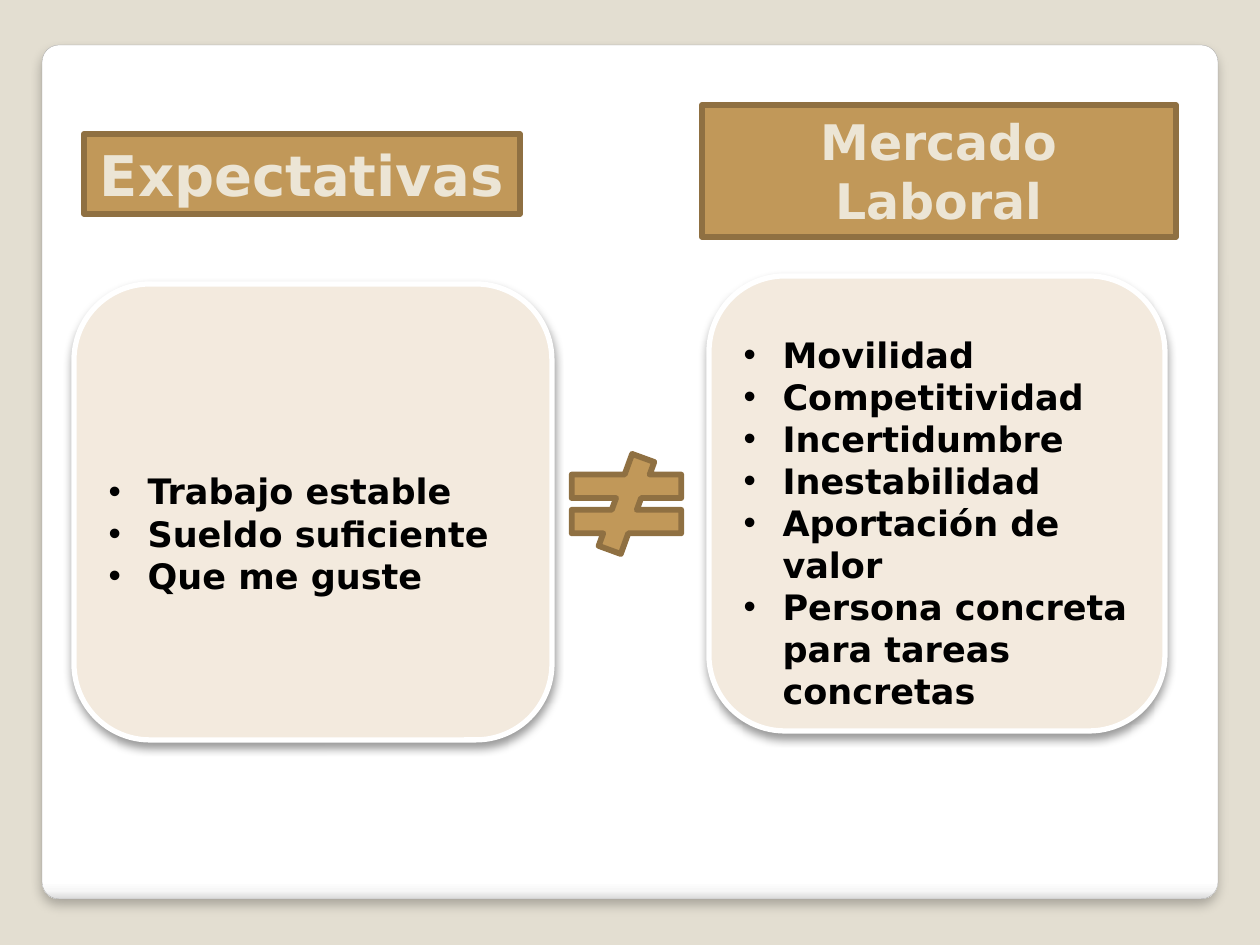
from dataclasses import dataclass

from lxml import etree
from pptx import Presentation
from pptx.dml.color import RGBColor
from pptx.enum.shapes import MSO_SHAPE
from pptx.enum.text import MSO_ANCHOR, MSO_AUTO_SIZE, PP_ALIGN
from pptx.oxml.ns import qn
from pptx.util import Pt

ROUND = MSO_SHAPE.ROUNDED_RECTANGLE
UNEQUAL = MSO_SHAPE.MATH_NOT_EQUAL
TOP, MIDDLE = MSO_ANCHOR.TOP, MSO_ANCHOR.MIDDLE
LEFT, CENTER = PP_ALIGN.LEFT, PP_ALIGN.CENTER
FIXED = MSO_AUTO_SIZE.NONE
COMPARISON = 4
SCALE = 914400 / 126


@dataclass(frozen=True)
class Theme:
    font: str = "DejaVu Sans"
    back: str = "E3DED1"
    panel: tuple = ((0, "FFFFFF"), (98, "FFFFFF"), (99, "F7F7F7"), (100, "DADADA"))
    rim: str = "A4A4A4"
    card: str = "F3EADE"
    edge: str = "FFFFFF"
    gold: str = "C19859"
    brown: str = "8F7042"
    cream: str = "ECE5D5"
    ink: str = "000000"
    halo: str = "323232"
    list_size: int = 20
    hope_size: int = 32
    job_size: int = 28


THEME = Theme()


def px(num):
    return round(num * SCALE)


def rgb(code):
    return RGBColor.from_string(code)


def node(parent, tag, **attrs):
    item = etree.SubElement(parent, qn(tag))
    for key, value in attrs.items():
        item.set(key, str(value))
    return item


def place(shape, box):
    shape.left, shape.top, shape.width, shape.height = map(px, box)


def paint(shape, fill, line, width):
    shape.fill.solid()
    shape.fill.fore_color.rgb = rgb(fill)
    shape.line.color.rgb = rgb(line)
    shape.line.width = Pt(width)


def add_form(slide, kind, box):
    shape = slide.shapes.add_shape(kind, *map(px, box))
    shape.shadow.inherit = False
    return shape


def cast(shape, alpha, blur, dist):
    """Give the shape a soft black shadow that falls straight down."""
    effects = shape.element.spPr.find(qn("a:effectLst"))
    shade = node(effects, "a:outerShdw", blurRad=Pt(blur), dist=Pt(dist),
                 dir=5400000, algn="t", rotWithShape=0)
    color = node(shade, "a:srgbClr", val="000000")
    node(color, "a:alpha", val=alpha * 1000)


def write(para, text, size, color, align=LEFT, bullet=None, indent=0, halo=None):
    para.alignment = align
    para.space_before = Pt(0)
    run = para.add_run()
    run.text = text
    font = run.font
    font.name, font.size, font.bold = THEME.font, Pt(size), True
    font.color.rgb = rgb(color)
    if bullet:
        props = para._p.get_or_add_pPr()
        props.set("marL", str(px(indent)))
        props.set("indent", str(-px(indent)))
        node(props, "a:buFont", typeface="Arial")
        node(props, "a:buChar", char=bullet)
    if halo:
        line = etree.Element(qn("a:ln"), w=str(Pt(1)))
        node(node(line, "a:solidFill"), "a:srgbClr", val=halo)
        run._r.get_or_add_rPr().insert(0, line)


def add_panel(slide, box):
    """Put the backdrop and its white sheet on the slide master."""
    master = slide.slide_layout.slide_master
    master.background.fill.solid()
    master.background.fill.fore_color.rgb = rgb(THEME.back)
    panel = add_form(slide, ROUND, box)
    panel.adjustments[0] = 0.02
    panel.fill.gradient()
    panel.fill.gradient_angle = 270
    stops = panel.element.spPr.find(".//" + qn("a:gsLst"))
    for stop in list(stops):
        stops.remove(stop)
    for pos, code in THEME.panel:
        node(node(stops, "a:gs", pos=pos * 1000), "a:srgbClr", val=code)
    panel.line.color.rgb = rgb(THEME.rim)
    panel.line.width = Pt(0.16)
    cast(panel, 25, 6, 4)
    master.element.cSld.spTree.insert(2, panel.element)


def add_card(slide, box, items, drop):
    """Draw a list card; drop pushes its centred text down."""
    card = add_form(slide, ROUND, box)
    paint(card, THEME.card, THEME.edge, 3)
    cast(card, 40, 5.2, 3)
    frame = card.text_frame
    frame.word_wrap = True
    frame.vertical_anchor = MIDDLE
    frame.margin_top += px(drop)
    for num, item in enumerate(items):
        para = frame.add_paragraph() if num else frame.paragraphs[0]
        write(para, item, THEME.list_size, THEME.ink, bullet="•", indent=39)


def add_sign(slide, box):
    sign = add_form(slide, UNEQUAL, box)
    paint(sign, THEME.gold, THEME.brown, 3.35)


def set_head(head, box, text, size):
    place(head, box)
    paint(head, THEME.gold, THEME.brown, 3.35)
    frame = head.text_frame
    frame.word_wrap = True
    frame.auto_size = FIXED
    frame.vertical_anchor = TOP
    write(frame.paragraphs[0], text, size, THEME.cream, align=CENTER, halo=THEME.halo)


def main():
    deck = Presentation()
    deck.slide_width, deck.slide_height = px(1260), px(945)
    slide = deck.slides.add_slide(deck.slide_layouts[COMPARISON])
    heads = {1: ((84, 134, 436, 80), "Expectativas", THEME.hope_size),
             3: ((702, 105, 474, 132), "Mercado Laboral", THEME.job_size)}
    for holder in list(slide.placeholders):
        spot = holder.placeholder_format.idx
        if spot in heads:
            set_head(holder, *heads[spot])
        else:
            holder.element.getparent().remove(holder.element)
    add_panel(slide, (42, 45, 1176, 854))
    add_card(slide, (74, 284, 478, 456),
             ("Trabajo estable", "Sueldo suficiente", "Que me guste"), 42)
    add_card(slide, (709, 276, 456, 455),
             ("Movilidad", "Competitividad", "Incertidumbre", "Inestabilidad",
              "Aportación de valor", "Persona concreta para tareas concretas"), 38)
    add_sign(slide, (552, 454, 149, 100))
    deck.save("out.pptx")


if __name__ == "__main__":
    main()
